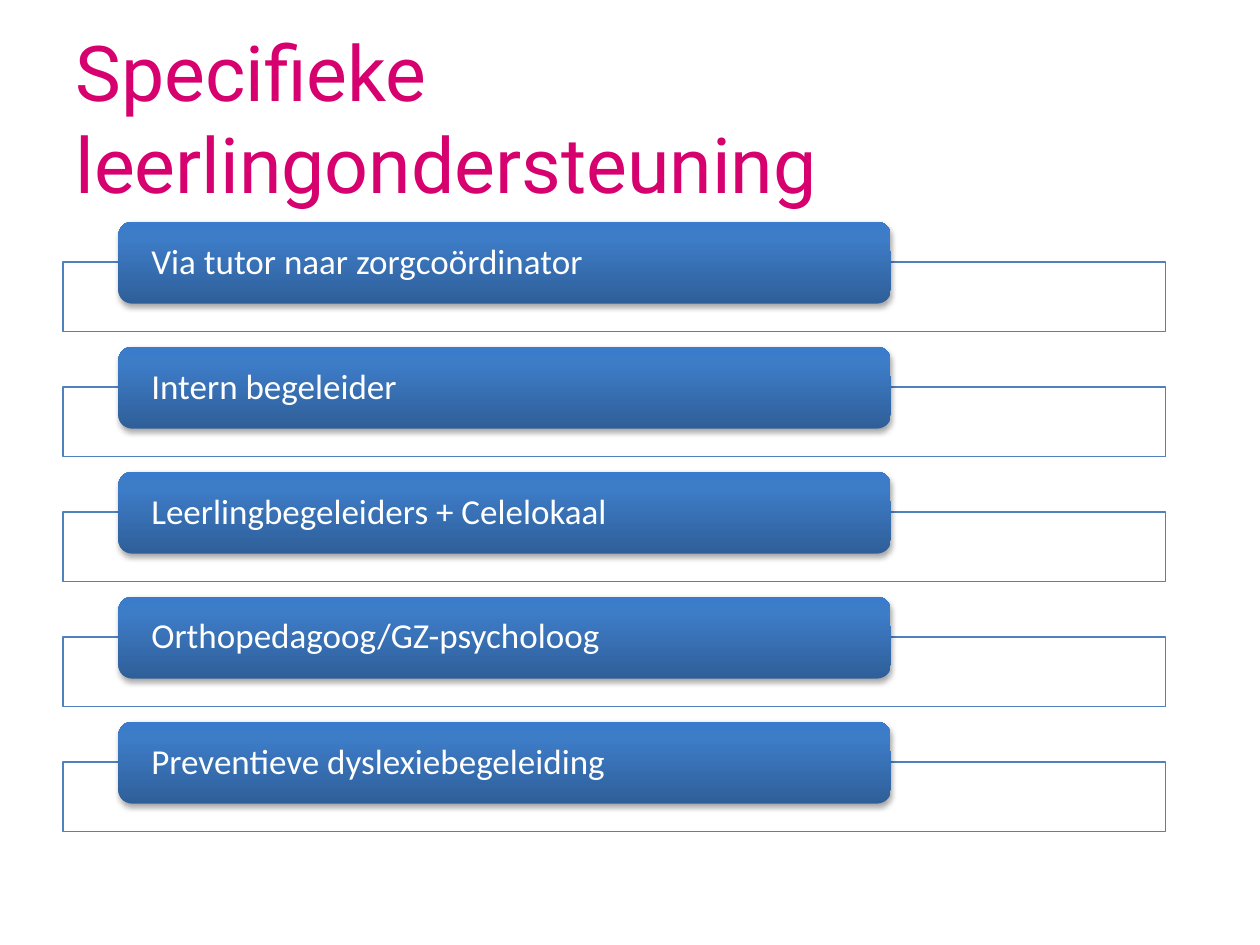
from dataclasses import dataclass

from lxml.etree import SubElement
from pptx import Presentation
from pptx.dml.color import RGBColor
from pptx.enum.shapes import MSO_SHAPE as Preset
from pptx.enum.text import MSO_ANCHOR as Anchor, PP_ALIGN as Align
from pptx.oxml import parse_xml
from pptx.oxml.ns import nsdecls, qn
from pptx.shapes.autoshape import Shape
from pptx.slide import Slide
from pptx.util import Inches, Pt

MAGENTA = "D6006E"
WHITE = "FFFFFF"
FRAME_BLUE = "4F81BD"
GRADIENT = ((0, "2F5F99"), (80, "3D7CC7"), (100, "3A7CCB"))
FIRST_TOP = 1.76
PITCH = 0.992


@dataclass(frozen=True)
class Box:
    left: float
    top: float
    width: float
    height: float

    def lengths(self) -> tuple:
        return tuple(Inches(v) for v in (self.left, self.top, self.width, self.height))


def colour(value: str) -> RGBColor:
    return RGBColor.from_string(value)


def write(shape: Shape, text: str, font: str, size: float, ink: str,
          inset_x: float, inset_y: float, spacing: float) -> None:
    frame = shape.text_frame
    frame.word_wrap = True
    frame.vertical_anchor = Anchor.MIDDLE
    frame.margin_left = frame.margin_right = Inches(inset_x)
    frame.margin_top = frame.margin_bottom = Inches(inset_y)
    paragraph = frame.paragraphs[0]
    paragraph.alignment = Align.LEFT
    paragraph.line_spacing = spacing
    run = paragraph.add_run()
    run.text = text
    run.font.name = font
    run.font.size = Pt(size)
    run.font.color.rgb = colour(ink)


def add_gradient(shape: Shape) -> None:
    stops = "".join(
        f'<a:gs pos="{position * 1000}"><a:srgbClr val="{value}"/></a:gs>'
        for position, value in GRADIENT
    )
    gradient = parse_xml(
        f'<a:gradFill {nsdecls("a")} rotWithShape="1"><a:gsLst>{stops}</a:gsLst>'
        '<a:lin ang="16200000" scaled="0"/></a:gradFill>'
    )
    shape._element.spPr.find(qn("a:prstGeom")).addnext(gradient)


def add_shadow(shape: Shape) -> None:
    effects = shape._element.spPr.find(qn("a:effectLst"))
    shadow = SubElement(effects, qn("a:outerShdw"), blurRad=str(Pt(3.1)),
                        dist=str(Pt(1.8)), dir="5400000", rotWithShape="0")
    black = SubElement(shadow, qn("a:srgbClr"), val="000000")
    SubElement(black, qn("a:alpha"), val="35000")


def add_frame(slide: Slide, box: Box) -> None:
    frame = slide.shapes.add_shape(Preset.RECTANGLE, *box.lengths())
    frame.shadow.inherit = False
    frame.fill.solid()
    frame.fill.fore_color.rgb = colour(WHITE)
    fill = frame._element.spPr.find(qn("a:solidFill"))
    SubElement(fill[0], qn("a:alpha"), val="90000")
    frame.line.color.rgb = colour(FRAME_BLUE)
    frame.line.width = Pt(0.75)


def add_label(slide: Slide, box: Box, text: str) -> None:
    label = slide.shapes.add_shape(Preset.ROUNDED_RECTANGLE, *box.lengths())
    label.shadow.inherit = False
    label.line.fill.background()
    add_gradient(label)
    add_shadow(label)
    write(label, text, "Calibri", 20, WHITE, 0.23, 0, 0.9)


def main() -> None:
    deck = Presentation()
    deck.slide_width, deck.slide_height = Inches(10), Inches(7.5)
    slide = deck.slides.add_slide(deck.slide_layouts[6])

    title = slide.shapes.add_textbox(*Box(0.5, 0.3, 8.75, 1.25).lengths())
    write(title, "Specifieke leerlingondersteuning", "Roboto", 44, MAGENTA, 0.1, 0.05, 1.0)

    support_steps = (
        "Via tutor naar zorgcoördinator",
        "Intern begeleider",
        "Leerlingbegeleiders + Celelokaal",
        "Orthopedagoog/GZ-psycholoog",
        "Preventieve dyslexiebegeleiding",
    )
    for index, step in enumerate(support_steps):
        top = FIRST_TOP + index * PITCH
        add_frame(slide, Box(0.5, top + 0.32, 8.75, 0.55))
        add_label(slide, Box(0.94, top, 6.13, 0.65), step)

    deck.save("out.pptx")


if __name__ == "__main__":
    main()
